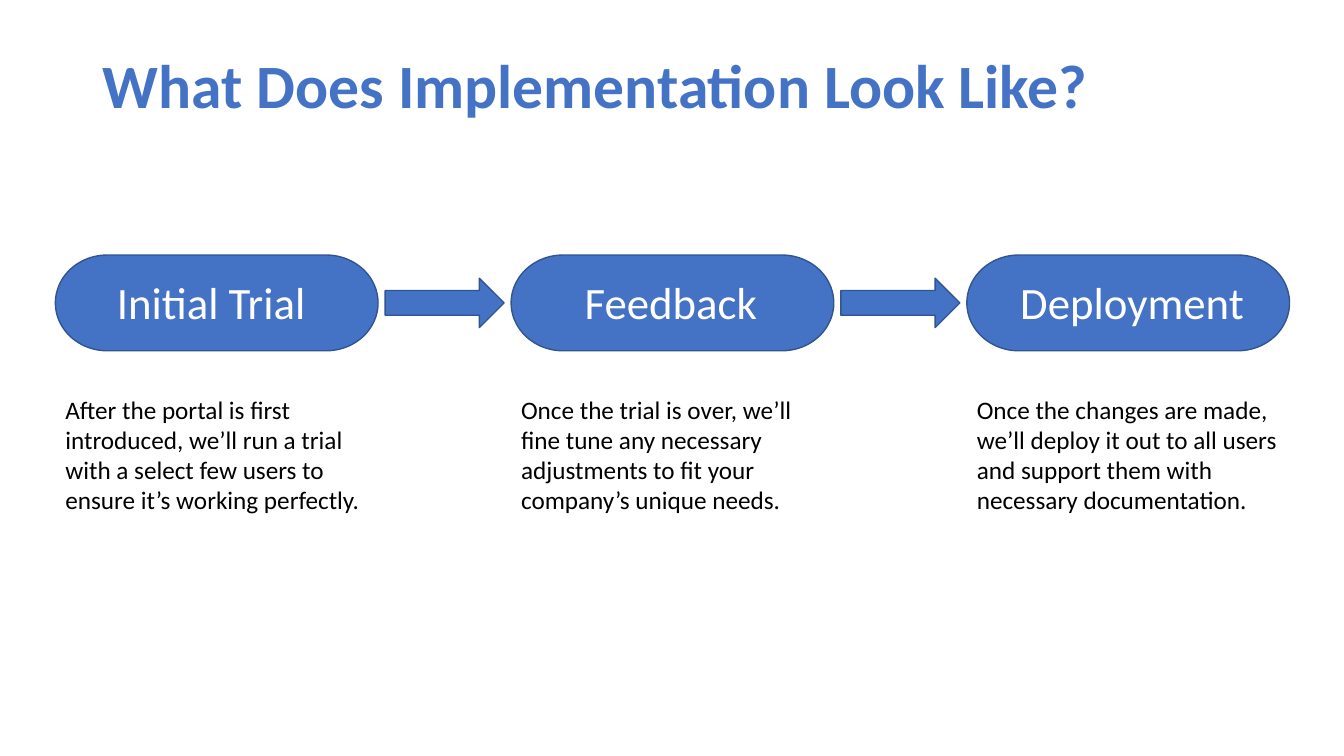
from pptx import Presentation
from pptx.dml.color import RGBColor
from pptx.enum.shapes import MSO_SHAPE as Shape
from pptx.enum.text import MSO_ANCHOR as Anchor, MSO_AUTO_SIZE as AutoSize, PP_ALIGN as Align
from pptx.util import Inches, Pt

BLUE, DARK_BLUE, WHITE, BLACK = "4472C4", "325491", "FFFFFF", "000000"


def write(box, text, size, color, bold=False):
    frame = box.text_frame
    frame.word_wrap = True
    para = frame.paragraphs[0]
    para.alignment = Align.LEFT
    span = para.add_run()
    span.text = text
    span.font.name = "Calibri"
    span.font.size = Pt(size)
    span.font.bold = bold
    span.font.color.rgb = RGBColor.from_string(color)


def add_blue_shape(page, kind, left, top, width, height):
    shape = page.shapes.add_shape(kind, Inches(left), Inches(top), Inches(width), Inches(height))
    shape.shadow.inherit = False
    shape.fill.solid()
    shape.fill.fore_color.rgb = RGBColor.from_string(BLUE)
    shape.line.color.rgb = RGBColor.from_string(DARK_BLUE)
    shape.line.width = Pt(1)


deck = Presentation()
deck.slide_width, deck.slide_height = Inches(13.33), Inches(7.5)
page = deck.slides.add_slide(deck.slide_layouts[5])

# Title
title = page.shapes.title
title.left, title.top = Inches(0.92), Inches(0.4)
title.width, title.height = Inches(11.5), Inches(0.95)
title.text_frame.vertical_anchor = Anchor.MIDDLE
write(title, "What Does Implementation Look Like?", 44, BLUE, bold=True)
title.text_frame.paragraphs[0].line_spacing = 0.9

# Steps: label, label left, label width, description
steps = [
    ("Initial Trial", 1.06, 2.18,
     "After the portal is first introduced, we’ll run a trial with a select few users "
     "to ensure it’s working perfectly."),
    ("Feedback", 5.7, 1.98,
     "Once the trial is over, we’ll fine tune any necessary adjustments to fit your "
     "company’s unique needs."),
    ("Deployment", 10.02, 2.59,
     "Once the changes are made, we’ll deploy it out to all users and support them "
     "with necessary documentation."),
]
FIRST_LEFT, STEP_PITCH, STEP_WIDTH = 0.55, 4.52, 3.2

for index, (label, label_left, label_width, description) in enumerate(steps):
    left = FIRST_LEFT + index * STEP_PITCH
    add_blue_shape(page, Shape.FLOWCHART_TERMINATOR, left, 2.53, STEP_WIDTH, 0.95)

    # Arrow to the next step
    if index < len(steps) - 1:
        add_blue_shape(page, Shape.RIGHT_ARROW, left + STEP_WIDTH + 0.07, 2.76, 1.18, 0.49)

    # Label on the step and description below it
    for text, text_left, top, width, height, size, color in [
        (label, label_left, 2.68, label_width, 0.64, 32, WHITE),
        (description, left, 3.86, STEP_WIDTH, 1.31, 18, BLACK),
    ]:
        box = page.shapes.add_textbox(Inches(text_left), Inches(top), Inches(width), Inches(height))
        write(box, text, size, color)
        box.text_frame.auto_size = AutoSize.SHAPE_TO_FIT_TEXT

deck.save("out.pptx")
